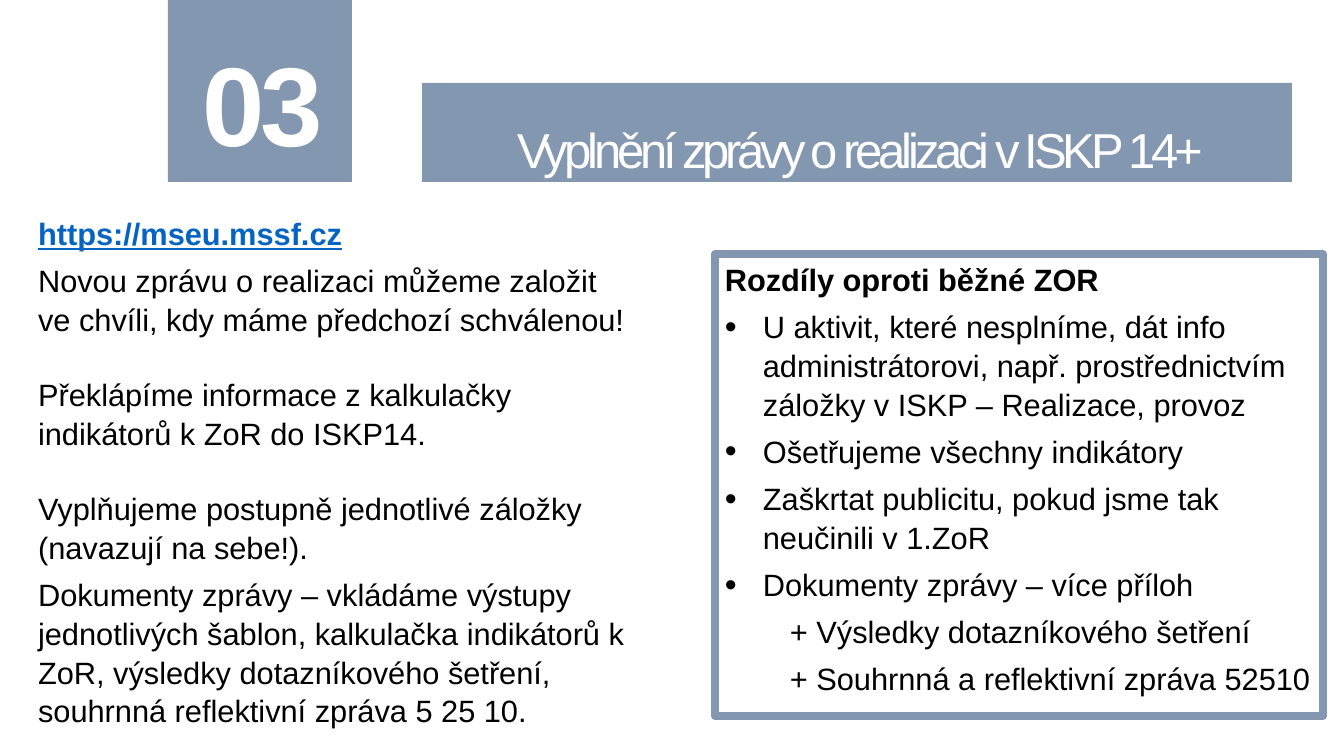
from dataclasses import dataclass

from pptx import Presentation
from pptx.dml.color import RGBColor
from pptx.enum.shapes import MSO_SHAPE as Shape
from pptx.enum.text import MSO_ANCHOR as Anchor, MSO_AUTO_SIZE as Fit, PP_ALIGN as Align
from pptx.oxml.ns import qn
from pptx.util import Pt
from lxml.etree import SubElement as sub

WIDE, HIGH = 1344, 756
SCALE = 12192000 / WIDE
BLUE = RGBColor(0x83, 0x97, 0xB0)
LINK = RGBColor(0x05, 0x63, 0xC1)
WHITE = RGBColor(0xFF, 0xFF, 0xFF)
BLACK = RGBColor(0, 0, 0)


def px(num: int) -> int:
    return round(num * SCALE)


@dataclass
class Box:
    left: int
    top: int
    width: int
    height: int

    def emu(self) -> list[int]:
        return [px(n) for n in (self.left, self.top, self.width, self.height)]


@dataclass
class Line:
    text: str
    bold: bool = False
    color: RGBColor = BLACK
    under: bool = False
    gap: int = 6
    left: int = 0
    bullet: bool = False


NUMBER = Box(168, 0, 184, 182)
HEAD = Box(422, 83, 870, 99)
BODY = Box(28, 208, 612, 532)
FRAME = Box(715, 254, 608, 462)
HANG, DEEP, WIDER = 38, 65, 26

STEPS = [
    Line("https://mseu.mssf.cz", bold=True, color=LINK, under=True),
    Line("Novou zprávu o realizaci můžeme založit ve chvíli, kdy máme předchozí schválenou!"),
    Line("Překlápíme informace z kalkulačky indikátorů k ZoR do ISKP14.", gap=WIDER),
    Line("Vyplňujeme postupně jednotlivé záložky (navazují na sebe!).", gap=WIDER),
    Line("Dokumenty zprávy – vkládáme výstupy jednotlivých šablon, kalkulačka indikátorů k ZoR, "
         "výsledky dotazníkového šetření, souhrnná reflektivní zpráva 5 25 10."),
]
NOTES = [
    Line("Rozdíly oproti běžné ZOR", bold=True),
    Line("U aktivit, které nesplníme, dát info administrátorovi, např. prostřednictvím "
         "záložky v ISKP – Realizace, provoz", left=HANG, bullet=True),
    Line("Ošetřujeme všechny indikátory", left=HANG, bullet=True),
    Line("Zaškrtat publicitu, pokud jsme tak neučinili v 1.ZoR", left=HANG, bullet=True),
    Line("Dokumenty zprávy – více příloh", left=HANG, bullet=True),
    Line("+ Výsledky dotazníkového šetření", left=DEEP),
    Line("+ Souhrnná a reflektivní zpráva 52510", left=DEEP),
]


def write(para, text: str, *, size: int = 22, color: RGBColor = BLACK, bold: bool = False,
          under: bool = False, align=Align.LEFT, lead: float = 1.05, gap: int = 0,
          track: int = 0) -> None:
    para.alignment, para.line_spacing = align, lead
    para.space_before, para.space_after = Pt(gap), Pt(0)
    run = para.add_run()
    run.text = text
    font = run.font
    font.name, font.size, font.bold, font.underline = "Arial", Pt(size), bold, under
    font.color.rgb = color
    if track:
        font._element.set("spc", str(track * 100))


def mark(para, left: int, bullet: bool) -> None:
    """Set the indent and the bullet, or switch the bullet off."""
    props = para._p.get_or_add_pPr()
    props.set("marL", str(px(left)))
    props.set("indent", str(px(-left) if bullet else 0))
    if bullet:
        sub(props, qn("a:buSzPct"), val="110000")
        sub(props, qn("a:buFont"), typeface="Arial")
        sub(props, qn("a:buChar"), char="•")
    else:
        sub(props, qn("a:buNone"))


def fill_list(shape, lines: list[Line]) -> None:
    frame = shape.text_frame
    frame.word_wrap, frame.auto_size = True, Fit.NONE
    frame.vertical_anchor = Anchor.TOP
    for i, line in enumerate(lines):
        para = frame.add_paragraph() if i else frame.paragraphs[0]
        mark(para, line.left, line.bullet)
        write(para, line.text, bold=line.bold, color=line.color, under=line.under,
              gap=line.gap if i else 0)


def fill_band(shape, text: str, **form) -> None:
    """Write centred white text on a solid blue band."""
    shape.fill.solid()
    shape.fill.fore_color.rgb = BLUE
    shape.line.fill.background()
    frame = shape.text_frame
    frame.word_wrap, frame.auto_size = True, Fit.NONE
    frame.vertical_anchor = Anchor.MIDDLE
    frame.margin_left, frame.margin_top = px(16), px(59)
    frame.margin_right, frame.margin_bottom = px(10), px(5)
    write(frame.paragraphs[0], text, color=WHITE, align=Align.CENTER, track=-3, **form)


def place(shape, box: Box):
    shape.left, shape.top, shape.width, shape.height = box.emu()
    return shape


def add_rect(slide, box: Box):
    shape = slide.shapes.add_shape(Shape.RECTANGLE, *box.emu())
    shape.shadow.inherit = False
    return shape


def main() -> None:
    deck = Presentation()
    deck.slide_width, deck.slide_height = px(WIDE), px(HIGH)
    slide = deck.slides.add_slide(deck.slide_layouts[1])
    fill_band(place(slide.shapes.title, NUMBER), "03", size=80, bold=True, lead=0.7)
    fill_list(place(slide.placeholders[1], BODY), STEPS)
    fill_band(add_rect(slide, HEAD), "Vyplnění zprávy o realizaci v ISKP 14+", size=35, lead=0.5)
    frame = add_rect(slide, FRAME)
    frame.fill.background()
    frame.line.color.rgb, frame.line.width = BLUE, Pt(5.75)
    fill_list(frame, NOTES)
    deck.save("out.pptx")


if __name__ == "__main__":
    main()
